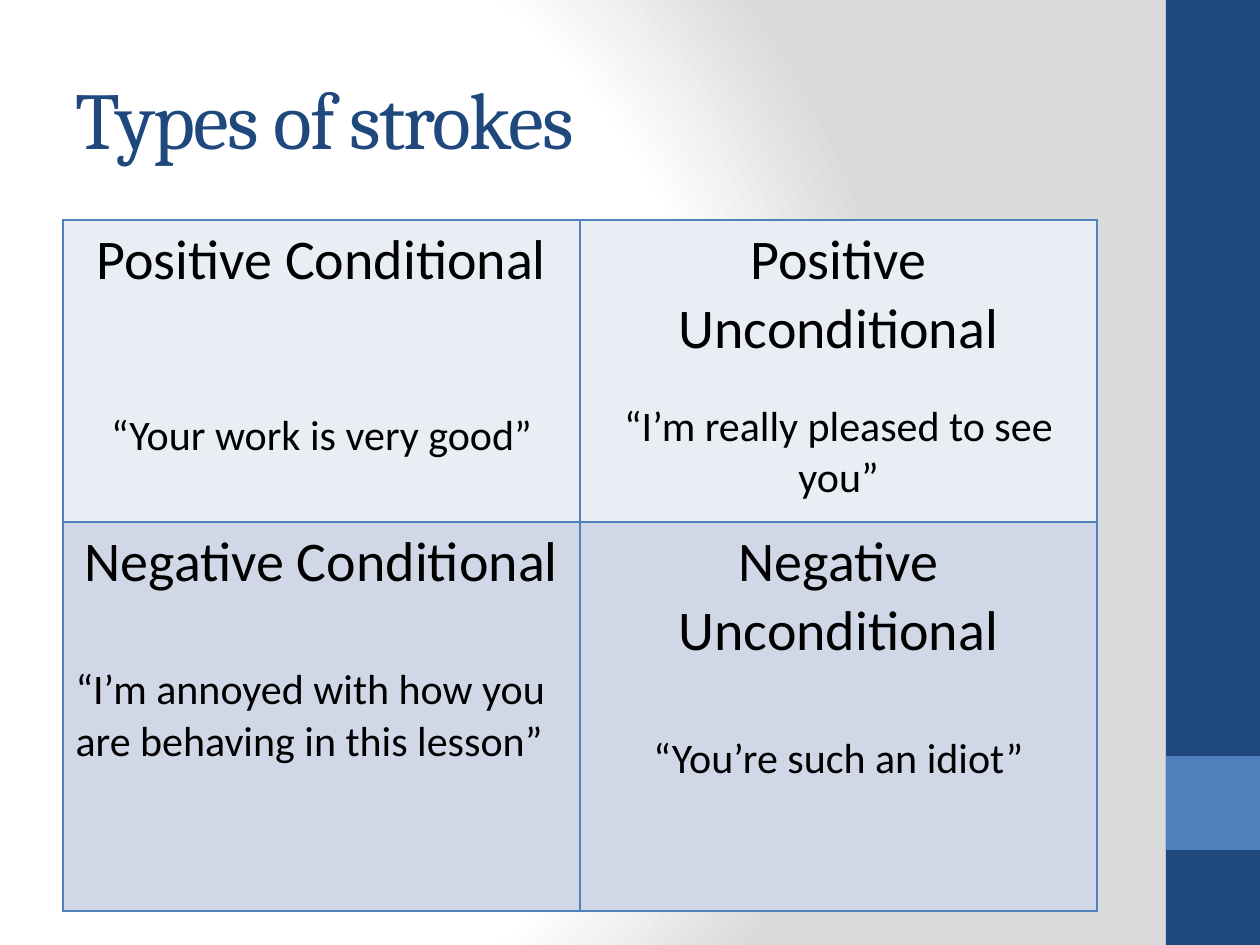
import pptx
import pptx.util
import pptx.dml.color
import pptx.enum.shapes
import pptx.enum.text
import pptx.oxml
import pptx.oxml.ns

PX = 914400 / 126
THEME = {
    "navy": "1F497D", "blue": "4F81BD", "black": "000000",
    "rows": ["E9EDF4", "D0D8E8"],
    "title_font": "Cambria", "body_font": "Calibri",
    "title": 46, "heading": 32, "quote": 24,
}
NS = pptx.oxml.ns.nsdecls("a")
ALIGN = pptx.enum.text.PP_ALIGN


def px(*lengths):
    """Turn px lengths into a list of EMU lengths."""
    return [pptx.util.Emu(round(n * PX)) for n in lengths]


def style_run(r, name, size, color):
    for key, value in {"name": name, "size": pptx.util.Pt(size), "bold": False}.items():
        setattr(r.font, key, value)
    r.font.color.rgb = pptx.dml.color.RGBColor.from_string(color)


prs = pptx.Presentation()
prs.slide_width, prs.slide_height = px(1260, 945)
s = prs.slides.add_slide(prs.slide_layouts[5])

# Background: circular gradient centred to the left
s.background.fill.gradient()
grad = s._element.find(".//" + pptx.oxml.ns.qn("a:gradFill"))
stops = "".join(
    f'<a:gs pos="{pos * 1000}"><a:srgbClr val="{color}"/></a:gs>'
    for pos, color in [(0, "FFFFFF"), (75, "FFFFFF"), (100, "DADADA")])
grad.getparent().replace(grad, pptx.oxml.parse_xml(
    f'<a:gradFill {NS} rotWithShape="1"><a:gsLst>{stops}</a:gsLst><a:path path="circle">'
    '<a:fillToRect l="20000" t="50000" r="100000" b="50000"/></a:path></a:gradFill>'))

# Side bar and its accent square
for top, height, color in [(0, 945, "navy"), (756, 94, "blue")]:
    sp = s.shapes.add_shape(pptx.enum.shapes.MSO_SHAPE.RECTANGLE, *px(1166, top, 94, height))
    sp.shadow.inherit = False
    sp.fill.solid()
    sp.fill.fore_color.rgb = pptx.dml.color.RGBColor.from_string(THEME[color])
    sp.line.fill.background()

# Title
title = s.shapes.title
title.left, title.top, title.width, title.height = px(63, 38, 1050, 158)
tf = title.text_frame
tf.vertical_anchor = pptx.enum.text.MSO_ANCHOR.MIDDLE
p = tf.paragraphs[0]
p.alignment = ALIGN.LEFT
r = p.add_run()
r.text = "Types of strokes"
style_run(r, THEME["title_font"], THEME["title"], THEME["navy"])
r.font._element.set("spc", "-100")

# Table of strokes: heading, quote, gap above quote in points, quote alignment
strokes = [
    [("Positive Conditional", "“Your work is very good”", 66, ALIGN.CENTER),
     ("Positive Unconditional", "“I’m really pleased to see you”", 22, ALIGN.CENTER)],
    [("Negative Conditional", "“I’m annoyed with how you are behaving in this lesson”", 39, ALIGN.LEFT),
     ("Negative Unconditional", "“You’re such an idiot”", 39, ALIGN.CENTER)],
]
table = s.shapes.add_table(2, 2, *px(63, 220, 1034, 691)).table
table.first_row = table.horz_banding = False
for col in table.columns:
    col.width = px(517)[0]
for row, height in zip(table.rows, (302, 389)):
    row.height = px(height)[0]

for i, row in enumerate(strokes):
    for j, (heading, quote, gap, align) in enumerate(row):
        cell = table.cell(i, j)
        tf = cell.text_frame
        lines = [(tf.paragraphs[0], heading, "heading", 0, ALIGN.CENTER),
                 (tf.add_paragraph(), quote, "quote", gap, align)]
        for p, text, size, before, alignment in lines:
            p.alignment = alignment
            p.space_before = pptx.util.Pt(before)
            r = p.add_run()
            r.text = text
            style_run(r, THEME["body_font"], THEME[size], THEME["black"])
        tcPr = cell._tc.get_or_add_tcPr()
        for side in ("lnL", "lnR", "lnT", "lnB"):
            tcPr.append(pptx.oxml.parse_xml(
                f'<a:{side} {NS} w="12700"><a:solidFill><a:srgbClr val="{THEME["blue"]}"/>'
                f'</a:solidFill></a:{side}>'))
        cell.fill.solid()
        cell.fill.fore_color.rgb = pptx.dml.color.RGBColor.from_string(THEME["rows"][i])

prs.save("out.pptx")
